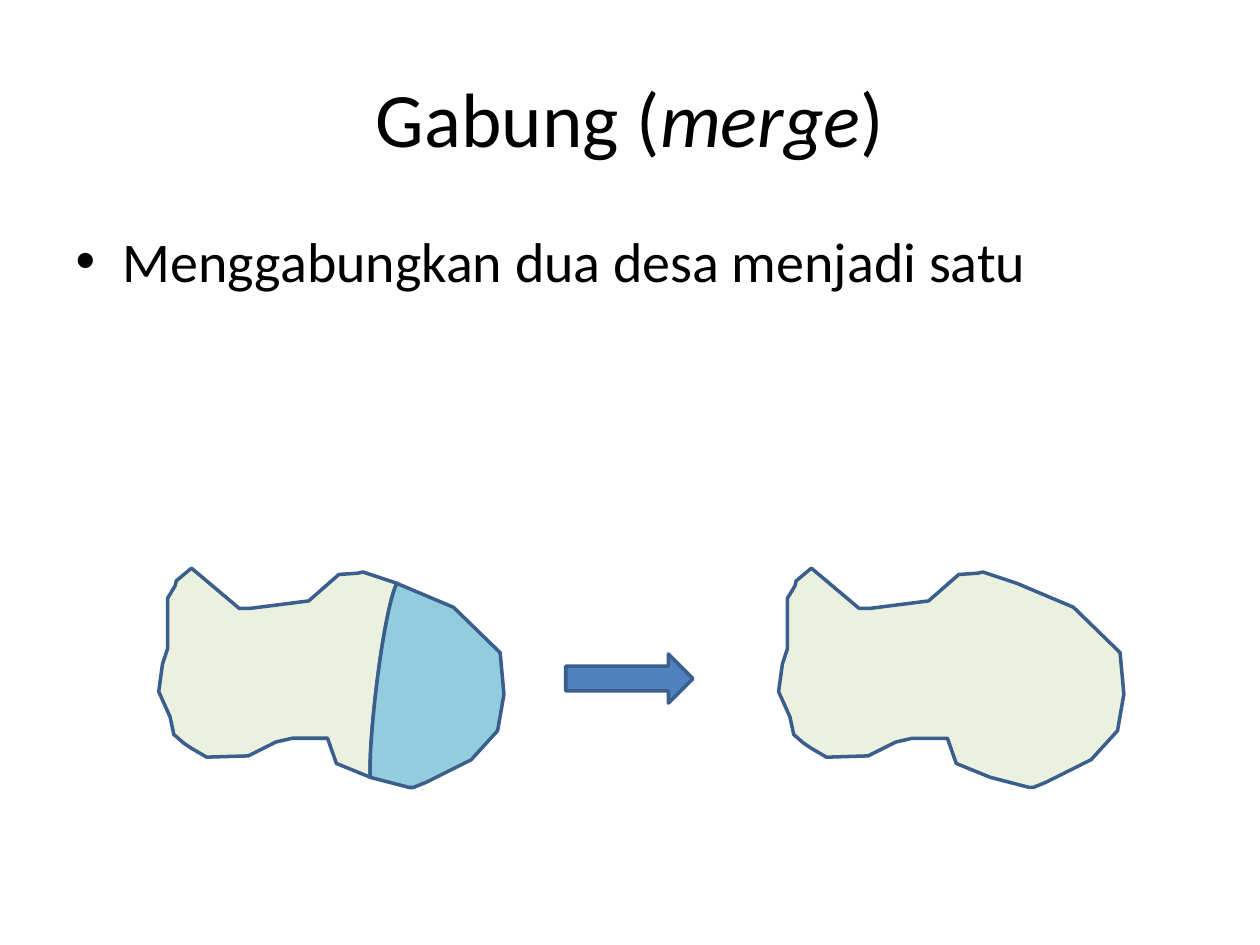
"""Build a slide that shows two villages merging into one."""
from pptx import Presentation
from pptx.dml.color import RGBColor
from pptx.enum.shapes import MSO_SHAPE
from pptx.enum.text import MSO_ANCHOR, PP_ALIGN
from pptx.util import Inches, Pt

COLORS = {"text": "000000", "west": "EBF1DE", "east": "93CDDD",
          "arrow": "4F81BD", "outline": "3A5F8C"}

deck = Presentation()
deck.slide_width, deck.slide_height = Inches(10), Inches(7.5)
column, row = deck.slide_width / 1000, deck.slide_height / 750
slide = deck.slides.add_slide(deck.slide_layouts[1])


def paint(area, color):
    area.shadow.inherit = False
    area.fill.solid()
    area.fill.fore_color.rgb = RGBColor.from_string(COLORS[color])
    area.line.color.rgb = RGBColor.from_string(COLORS["outline"])
    area.line.width = Pt(2)


def write(paragraph, words, size, italic=False):
    run = paragraph.add_run()
    run.text = words
    run.font.name, run.font.size, run.font.italic = "Calibri", Pt(size), italic
    run.font.color.rgb = RGBColor.from_string(COLORS["text"])


title, body = slide.shapes.title, slide.placeholders[1]
for holder, top, height in ((title, 30, 125), (body, 175, 495)):
    holder.left, holder.top = round(50 * column), round(top * row)
    holder.width, holder.height = round(900 * column), round(height * row)

title.text_frame.vertical_anchor = MSO_ANCHOR.MIDDLE
heading = title.text_frame.paragraphs[0]
heading.alignment = PP_ALIGN.CENTER
for words, italic in (("Gabung (", False), ("merge", True), (")", False)):
    write(heading, words, 44, italic)
write(body.text_frame.paragraphs[0], "Menggabungkan dua desa menjadi satu", 32)

south, north = (294, 617), (315, 463)
west_edge = [south, (267, 606), (260, 586), (232, 586), (219, 589), (197, 600),
             (164, 601), (152, 594), (146, 590), (138, 583), (135, 569),
             (126, 549), (129, 527), (133, 515), (133, 475), (139, 465),
             (140, 461), (152, 451), (190, 483), (198, 483), (245, 477),
             (269, 456), (284, 455), (288, 454), north]
east_edge = [north, (360, 482), (397, 518), (400, 551), (395, 580), (374, 603),
             (338, 621), (328, 625), (325, 625), south]

controls = (south, (292, 590), (304, 486), north)
steps = 24
border = []
for step in range(1, steps):
    t = step / steps
    weights = ((1 - t) ** 3, 3 * t * (1 - t) ** 2, 3 * t ** 2 * (1 - t), t ** 3)
    border.append(tuple(sum(w * point[axis] for w, point in zip(weights, controls))
                        for axis in (0, 1)))

merged_shift = 492
villages = ((west_edge + east_edge[1:-1], merged_shift, "west"),
            (west_edge + border[::-1], 0, "west"),
            (east_edge + border, 0, "east"))
for edge, shift, color in villages:
    corners = [((x + shift) * column, y * row) for x, y in edge]
    outline = slide.shapes.build_freeform(*corners[0])
    outline.add_line_segments(corners[1:], close=True)
    paint(outline.convert_to_shape(), color)

arrow = slide.shapes.add_shape(MSO_SHAPE.RIGHT_ARROW, round(449 * column), round(519 * row),
                               round(101 * column), round(39 * row))
paint(arrow, "arrow")

deck.save("out.pptx")
